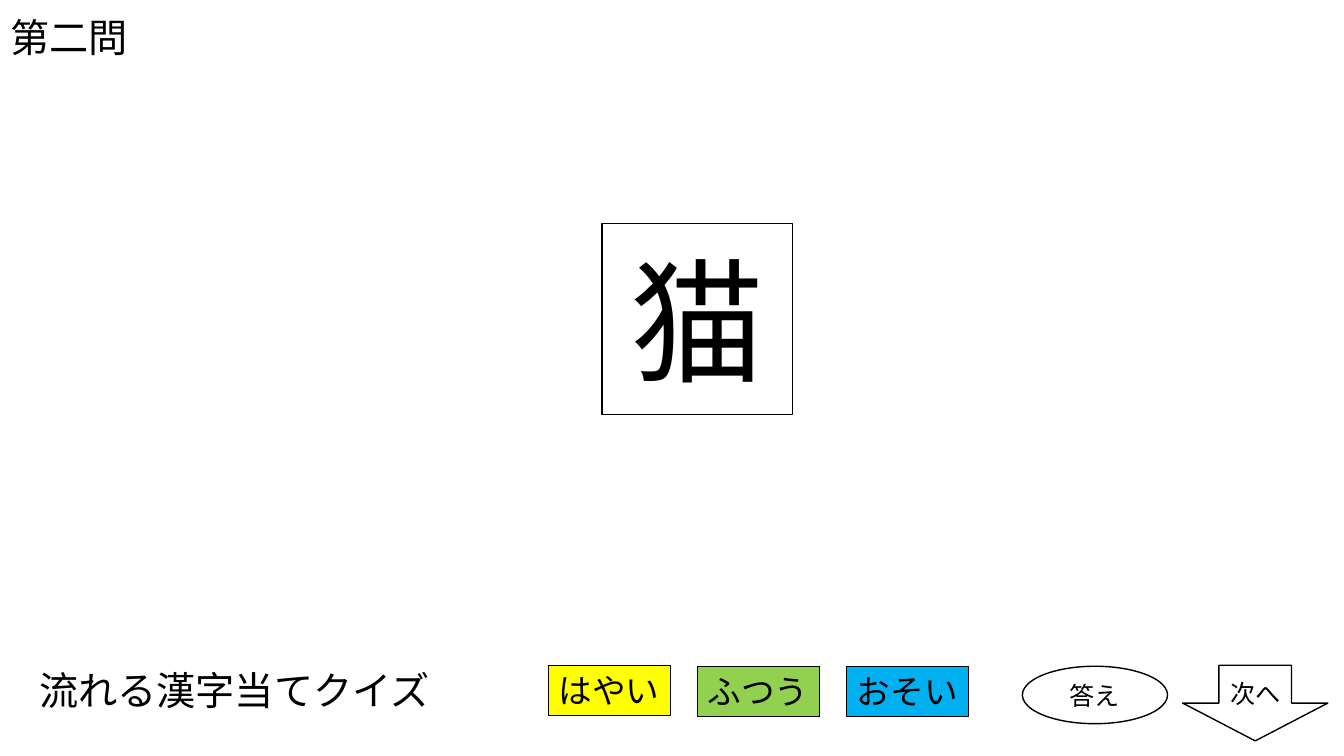
from pptx import Presentation
from pptx.dml.color import RGBColor
from pptx.enum.shapes import MSO_SHAPE
from pptx.enum.text import MSO_ANCHOR, MSO_AUTO_SIZE, PP_ALIGN
from pptx.oxml.ns import qn
from pptx.util import Inches, Pt
from lxml.etree import SubElement

FACE = "Noto Sans CJK JP"


def paint(color, value):
    color.rgb = RGBColor.from_string(value)


def write(shape, text, size, frame_set, align):
    frame = shape.text_frame
    frame.text = text
    for name, value in frame_set.items():
        setattr(frame, name, value)
    para = frame.paragraphs[0]
    para.alignment = align
    font = para.runs[0].font
    for name, value in {"name": FACE, "size": Pt(size)}.items():
        setattr(font, name, value)
    paint(font.color, "000000")
    SubElement(font._element, qn("a:ea"), typeface=FACE)


deck = Presentation()
deck.slide_width = Inches(13.33)
deck.slide_height = Inches(7.5)
slide = deck.slides.add_slide(deck.slide_layouts[5])
shapes = slide.shapes

label = {
    "word_wrap": False,
    "auto_size": MSO_AUTO_SIZE.SHAPE_TO_FIT_TEXT,
    "vertical_anchor": MSO_ANCHOR.TOP,
}
center = {"word_wrap": True, "vertical_anchor": MSO_ANCHOR.MIDDLE}

title = shapes.title
place = {"left": 0, "top": 0.08, "width": 1.38, "height": 0.57}
for name, value in place.items():
    setattr(title, name, Inches(value))
write(title, "第二問", 28, label, PP_ALIGN.LEFT)

quiz = shapes.add_textbox(Inches(0.29), Inches(6.56), Inches(4.13), Inches(0.57))
write(quiz, "流れる漢字当てクイズ", 28, label, PP_ALIGN.LEFT)

items = [
    (MSO_SHAPE.DOWN_ARROW, (11.73, 6.6, 1.44, 0.75), "FFFFFF", 1, "次へ", 18, center),
    (MSO_SHAPE.OVAL, (10.14, 6.61, 1.44, 0.57), "FFFFFF", 1, "答え", 18, center),
    (MSO_SHAPE.RECTANGLE, (5.97, 2.22, 1.89, 1.89), "FFFFFF", 1, "猫", 96, center),
]
speeds = [("はやい", "FFFF00", 6.6), ("ふつう", "92D050", 6.61), ("おそい", "00B0F0", 6.61)]
for i, (text, fill, top) in enumerate(speeds):
    box = (5.44 + 1.48 * i, top, 1.21, 0.5)
    items.append((MSO_SHAPE.RECTANGLE, box, fill, 0.75, text, 24, label))

for kind, box, fill, width, text, size, style in items:
    shape = shapes.add_shape(kind, *map(Inches, box))
    shape.shadow.inherit = False
    shape.fill.solid()
    paint(shape.fill.fore_color, fill)
    paint(shape.line.color, "000000")
    shape.line.width = Pt(width)
    align = PP_ALIGN.CENTER if style is center else PP_ALIGN.LEFT
    write(shape, text, size, style, align)

deck.save("out.pptx")
